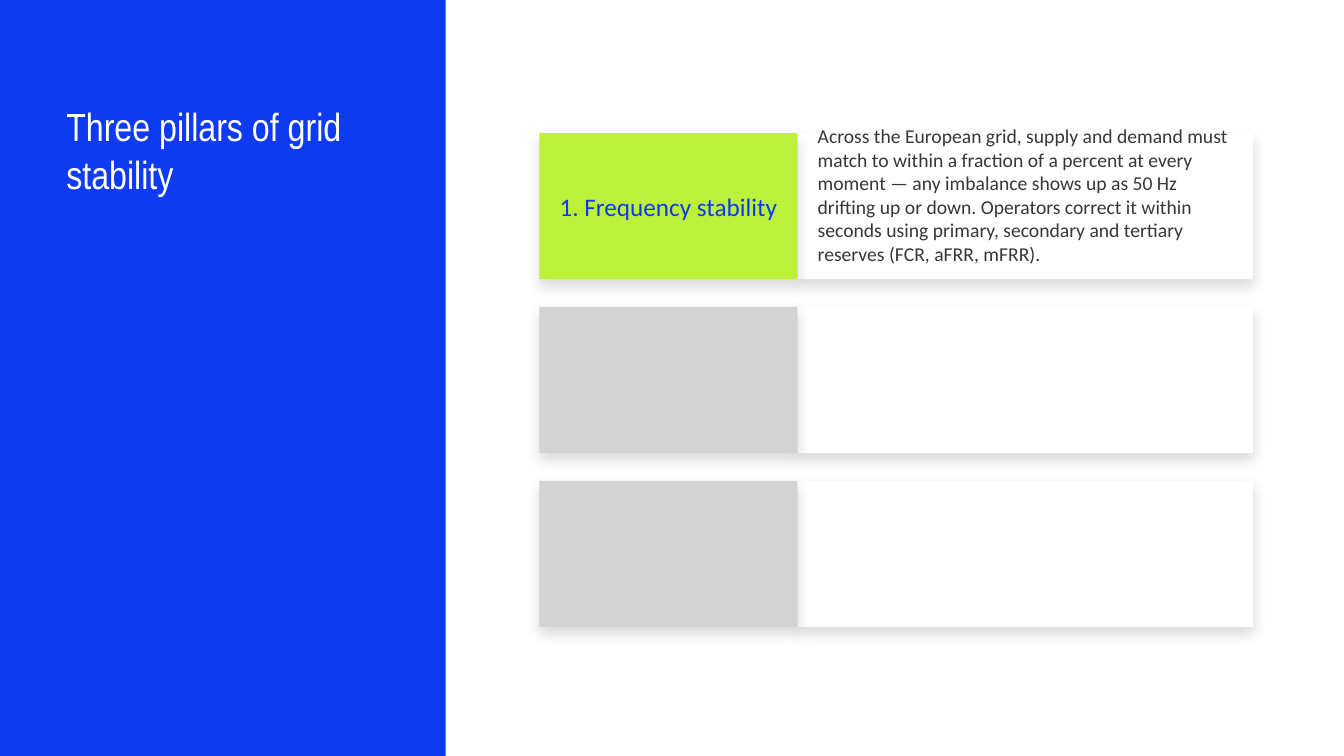
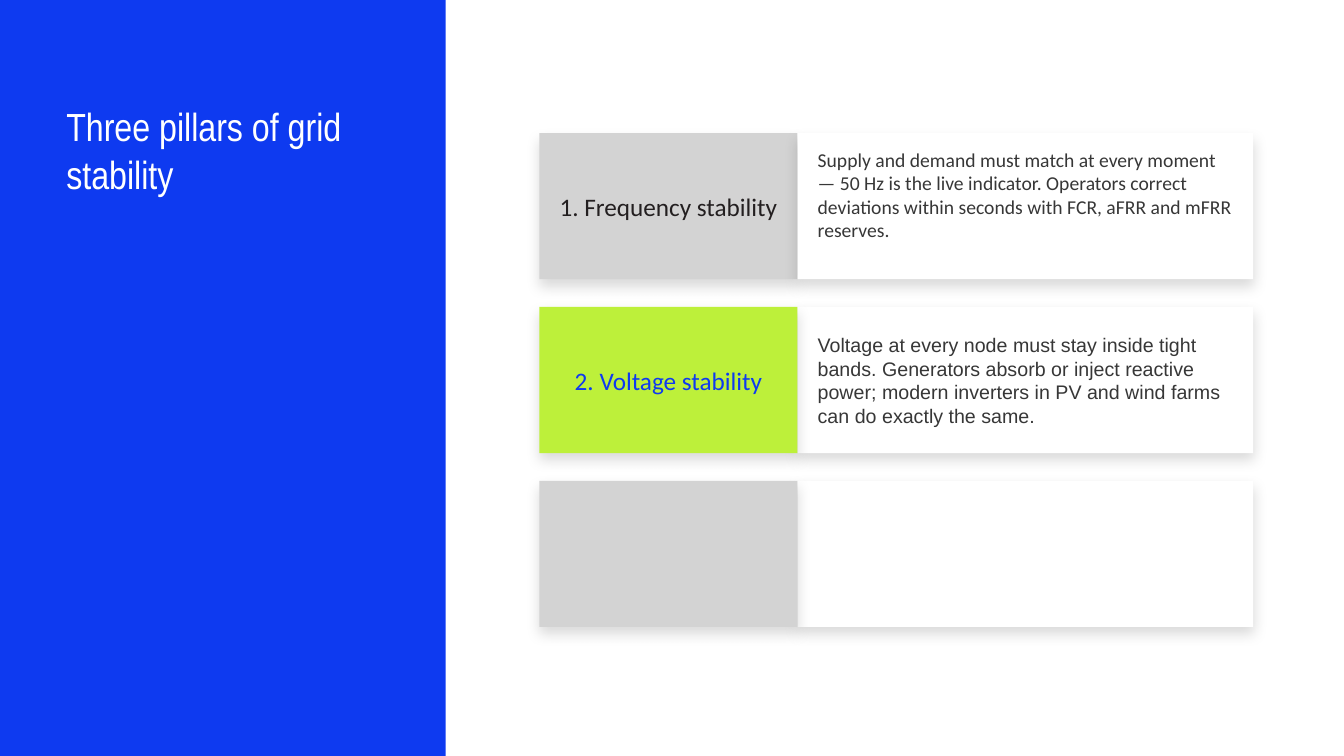
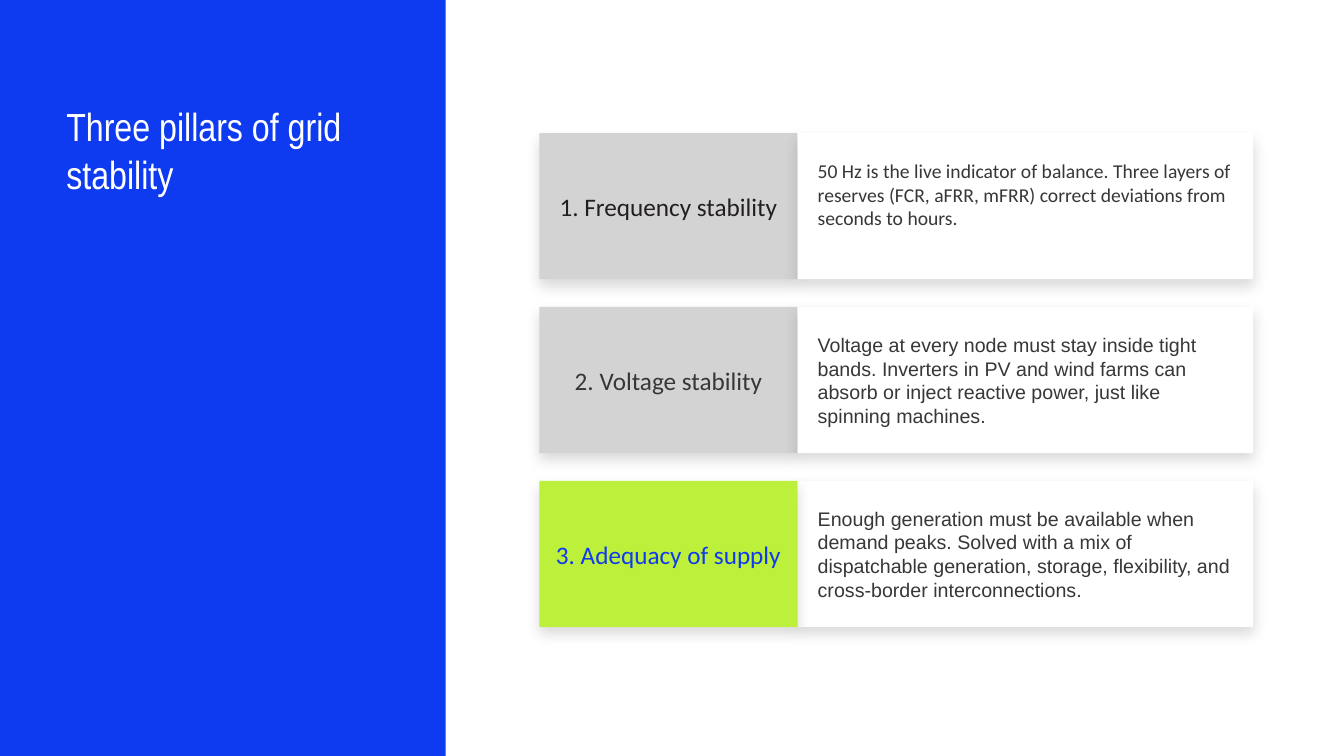
from dataclasses import dataclass

from lxml import etree
from pptx import Presentation
from pptx import util as u
from pptx.dml.color import RGBColor
from pptx.enum import shapes, text
from pptx.oxml.ns import qn

WIDE, HIGH = 13.33, 7.5
TITLE = "Three pillars of grid stability"
HUES = {
    "blue": "0E3AF0",
    "lime": "BDF03A",
    "gray": "D3D3D3",
    "white": "FFFFFF",
    "ink": "231F20",
    "text": "373737",
}

# Card grid: one row per pillar, a label column and a body column
ROWS = 3
TOP, STEP, TALL = 1.32, 1.725, 1.45
LEFT, SPLIT, RIGHT = 5.35, 7.91, 12.43


@dataclass(frozen=True)
class Pillar:
    name: str
    font: str        # body font
    done: str        # label colour once the pillar has been covered
    foot: float      # bottom inset of the body


@dataclass(frozen=True)
class Style:
    font: str
    size: int
    hue: str
    align: text.PP_ALIGN = text.PP_ALIGN.LEFT


PILLARS = [
    Pillar("1. Frequency stability", "Calibri", "ink", 0.27),
    Pillar("2. Voltage stability", "Arial", "text", 0.04),
    Pillar("3. Adequacy of supply", "Arial", "text", 0.04),
]

# Body texts of each slide; the last one belongs to the active pillar
STAGES = [
    [
        "Across the European grid, supply and demand must match to within a "
        "fraction of a percent at every moment — any imbalance shows up as "
        "50 Hz drifting up or down. Operators correct it within seconds using "
        "primary, secondary and tertiary reserves (FCR, aFRR, mFRR).",
    ],
    [
        "Supply and demand must match at every moment — 50 Hz is the live "
        "indicator. Operators correct deviations within seconds with FCR, "
        "aFRR and mFRR reserves.",
        "Voltage at every node must stay inside tight bands. Generators absorb "
        "or inject reactive power; modern inverters in PV and wind farms can "
        "do exactly the same.",
    ],
    [
        "50 Hz is the live indicator of balance. Three layers of reserves "
        "(FCR, aFRR, mFRR) correct deviations from seconds to hours.",
        "Voltage at every node must stay inside tight bands. Inverters in PV "
        "and wind farms can absorb or inject reactive power, just like "
        "spinning machines.",
        "Enough generation must be available when demand peaks. Solved with a "
        "mix of dispatchable generation, storage, flexibility, and "
        "cross-border interconnections.",
    ],
]


def paint(hue: str) -> RGBColor:
    return RGBColor.from_string(HUES[hue])


def write(shape, words: str, style: Style, pads: tuple) -> None:
    """Fill the shape with one styled paragraph; pads are left, top, right, bottom."""
    frame = shape.text_frame
    frame.word_wrap = True
    (frame.margin_left, frame.margin_top,
     frame.margin_right, frame.margin_bottom) = map(u.Inches, pads)
    para = frame.paragraphs[0]
    para.text = words
    para.alignment = style.align
    para.font.name = style.font
    para.font.size = u.Pt(style.size)
    para.font.color.rgb = paint(style.hue)


def block(slide, left: float, top: float, wide: float, tall: float, hue: str):
    """Plain rectangle without outline or shadow."""
    box = slide.shapes.add_shape(
        shapes.MSO_SHAPE.RECTANGLE, *map(u.Inches, (left, top, wide, tall)))
    box.fill.solid()
    box.fill.fore_color.rgb = paint(hue)
    box.line.fill.background()
    box.shadow.inherit = False
    return box


def shade(box) -> None:
    """Soft black shadow straight below the box."""
    effects = box.element.spPr.find(qn("a:effectLst"))
    outer = etree.SubElement(
        effects, qn("a:outerShdw"), blurRad=str(u.Pt(10)), dist=str(u.Pt(5)),
        dir="5400000", algn="t", rotWithShape="0")
    color = etree.SubElement(outer, qn("a:srgbClr"), val="000000")
    etree.SubElement(color, qn("a:alpha"), val="15000")


def card(slide, row: int, left: float, right: float, hue: str):
    box = block(slide, left, TOP + row * STEP, right - left, TALL, hue)
    shade(box)
    box.text_frame.vertical_anchor = text.MSO_ANCHOR.MIDDLE
    return box


def label(slide, row: int, live: int) -> None:
    box = card(slide, row, LEFT, SPLIT, "lime" if row == live else "gray")
    if row <= live:
        pillar = PILLARS[row]
        hue = "blue" if row == live else pillar.done
        style = Style("Calibri", 18, hue, text.PP_ALIGN.CENTER)
        write(box, pillar.name, style, (0.08, 0.04, 0.08, 0.04))


def body(slide, row: int, notes: list[str]) -> None:
    box = card(slide, row, SPLIT, RIGHT, "white")
    if row < len(notes):
        pillar = PILLARS[row]
        style = Style(pillar.font, 14, "text")
        write(box, notes[row], style, (0.2, 0.04, 0.2, pillar.foot))


def head(slide) -> None:
    box = slide.shapes.add_textbox(*map(u.Inches, (0.56, 0.97, 3.31, 1.51)))
    write(box, TITLE, Style("Arial Narrow", 28, "white"), (0.1, 0.05, 0.1, 0.05))
    box.text_frame.auto_size = text.MSO_AUTO_SIZE.SHAPE_TO_FIT_TEXT


def stage(slide, notes: list[str]) -> None:
    live = len(notes) - 1
    head(slide)
    for row in range(ROWS):
        # A covered pillar's body lies over its label, otherwise under it
        if row < live:
            label(slide, row, live)
            body(slide, row, notes)
        else:
            body(slide, row, notes)
            label(slide, row, live)


def main() -> None:
    deck = Presentation()
    deck.slide_width, deck.slide_height = u.Inches(WIDE), u.Inches(HIGH)
    blank = deck.slide_layouts[6]
    slides = [deck.slides.add_slide(blank) for _ in STAGES]

    # The side band lives on the layout that all slides share
    band = block(slides[0], 0, 0, 4.42, HIGH, "blue")
    blank.shapes.element.append(band.element)

    for slide, notes in zip(slides, STAGES):
        stage(slide, notes)
    deck.save("out.pptx")


if __name__ == "__main__":
    main()
